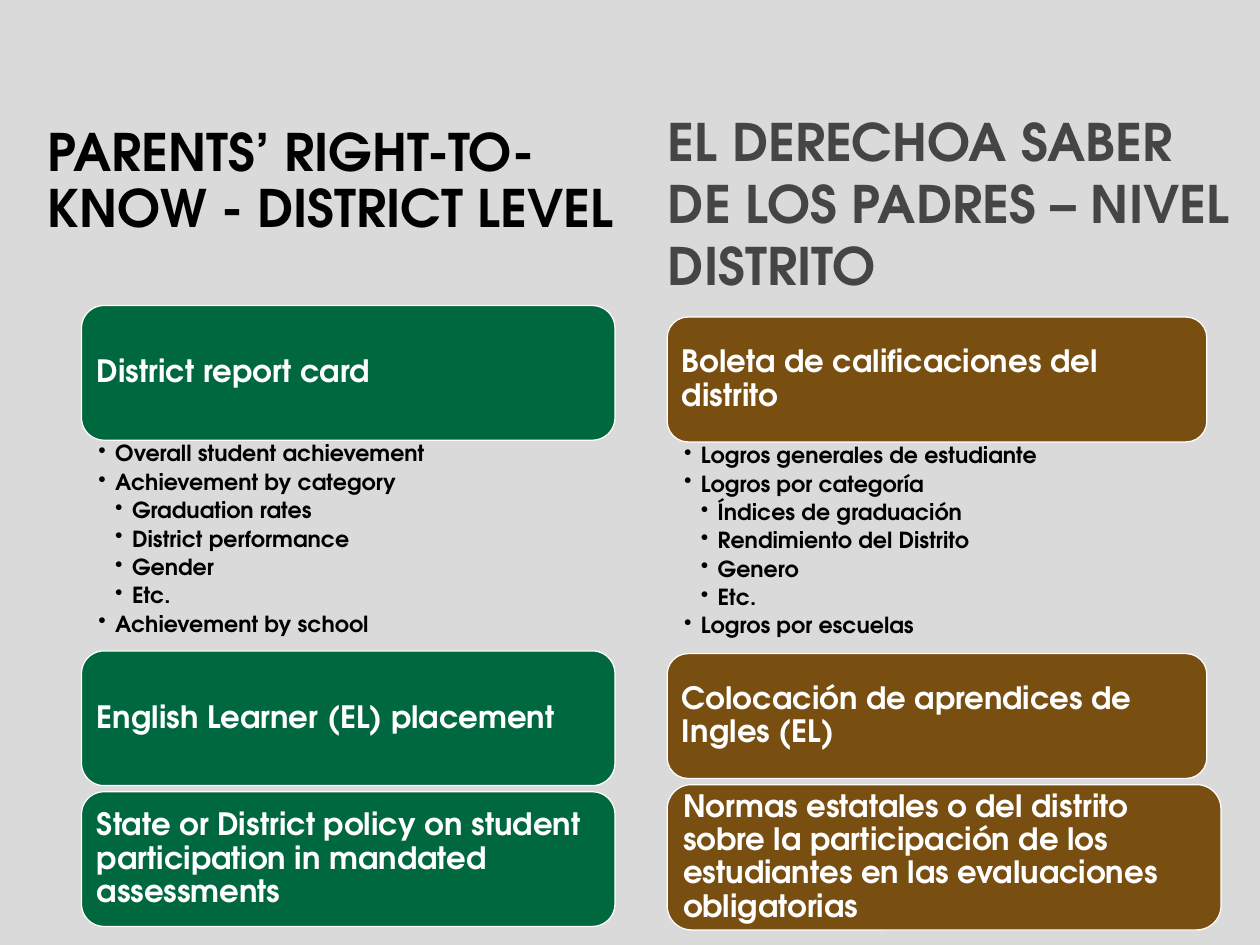
from lxml import etree
from pptx import Presentation
from pptx import util as u
from pptx.dml.color import RGBColor
from pptx.enum import shapes, text
from pptx.oxml import ns

FONT = "TeX Gyre Adventor"
STEP = 0.19  # bullet indent per level

# Content: title, cards and bullets for each language
COLS = [
    {
        "title": "PARENTS’ RIGHT-TO-KNOW - DISTRICT LEVEL",
        "box": (0.44, 1.06, 6.67, 2.01), "ink": "000000", "lead": 0.9,
        "anchor": text.MSO_ANCHOR.MIDDLE, "fill": "00683F",
        "cards": [
            ("District report card", (0.92, 3.45, 6.02, 1.52)),
            ("English Learner (EL) placement", (0.92, 7.35, 6.02, 1.52)),
            ("State or District policy on student participation in mandated "
             "assessments", (0.92, 8.94, 6.02, 1.52)),
        ],
        "list": [
            (1, "Overall student achievement"),
            (1, "Achievement by category"),
            (2, "Graduation rates"),
            (2, "District performance"),
            (2, "Gender"),
            (2, "Etc."),
            (1, "Achievement by school"),
        ],
    },
    {
        "title": "EL DERECHOA SABER DE LOS PADRES – NIVEL DISTRITO",
        "box": (7.44, 1.19, 6.67, 2.01), "ink": "454545", "lead": 1.0,
        "anchor": text.MSO_ANCHOR.TOP, "fill": "794E11",
        "cards": [
            ("Boleta de calificaciones del distrito", (7.53, 3.58, 6.09, 1.41)),
            ("Colocación de aprendices de Ingles (EL)", (7.53, 7.38, 6.09, 1.41)),
            ("Normas estatales o del distrito sobre la participación de los "
             "estudiantes en las evaluaciones obligatorias",
             (7.53, 8.86, 6.25, 1.64)),
        ],
        "list": [
            (1, "Logros generales de estudiante"),
            (1, "Logros por categoría"),
            (2, "Índices de graduación"),
            (2, "Rendimiento del Distrito"),
            (2, "Genero"),
            (2, "Etc."),
            (1, "Logros por escuelas"),
        ],
    },
]


def color(code):
    return RGBColor.from_string(code)


def place(box):
    return [u.Inches(v) for v in box]


def style(para, size, ink, lead):
    para.alignment = text.PP_ALIGN.LEFT
    para.line_spacing = lead
    for run in para.runs:
        font = run.font
        font.name, font.size, font.bold = FONT, u.Pt(size), True
        font.color.rgb = color(ink)


def setup(frame, anchor, pads):
    frame.word_wrap = True
    frame.vertical_anchor = anchor
    (frame.margin_left, frame.margin_top,
     frame.margin_right, frame.margin_bottom) = place(pads)


def add_title(slide, col):
    frame = slide.shapes.add_textbox(*place(col["box"])).text_frame
    setup(frame, col["anchor"], (0.1, 0.05, 0.1, 0.05))
    frame.text = col["title"]
    style(frame.paragraphs[0], 42, col["ink"], col["lead"])


def add_card(slide, words, box, fill):
    card = slide.shapes.add_shape(
        shapes.MSO_SHAPE.ROUNDED_RECTANGLE, *place(box))
    card.shadow.inherit = False
    card.fill.solid()
    card.fill.fore_color.rgb = color(fill)
    card.line.color.rgb = color("FFFFFF")
    card.line.width = u.Pt(1)
    setup(card.text_frame, text.MSO_ANCHOR.MIDDLE, (0.1,) * 4)
    card.text_frame.text = words
    style(card.text_frame.paragraphs[0], 25, "FFFFFF", 0.9)


def add_list(slide, items, box):
    frame = slide.shapes.add_textbox(*place(box)).text_frame
    setup(frame, text.MSO_ANCHOR.TOP, (0.19, 0.03, 0.14, 0.03))
    frame.text = "\n".join(words for _, words in items)
    for para, (level, _) in zip(frame.paragraphs, items):
        para.level = level
        props = para._p.get_or_add_pPr()
        props.set("marL", str(u.Inches(STEP * level)))
        props.set("indent", str(u.Inches(-STEP)))
        etree.SubElement(props, ns.qn("a:buChar")).set("char", "•")
        para.space_after = u.Pt(3.6)
        style(para, 18, "000000", 0.9)


def main():
    deck = Presentation()
    deck.slide_width, deck.slide_height = place((14.22, 10.67))
    slide = deck.slides.add_slide(deck.slide_layouts[6])
    slide.background.fill.solid()
    slide.background.fill.fore_color.rgb = color("DADADA")

    for col in COLS:
        add_title(slide, col)
        for words, box in col["cards"]:
            add_card(slide, words, box, col["fill"])
        # Bullets fill the gap between the first two cards
        left, top, width, height = col["cards"][0][1]
        start = top + height
        end = col["cards"][1][1][1]
        add_list(slide, col["list"], (left, start, width, end - start))

    deck.save("out.pptx")


if __name__ == "__main__":
    main()
